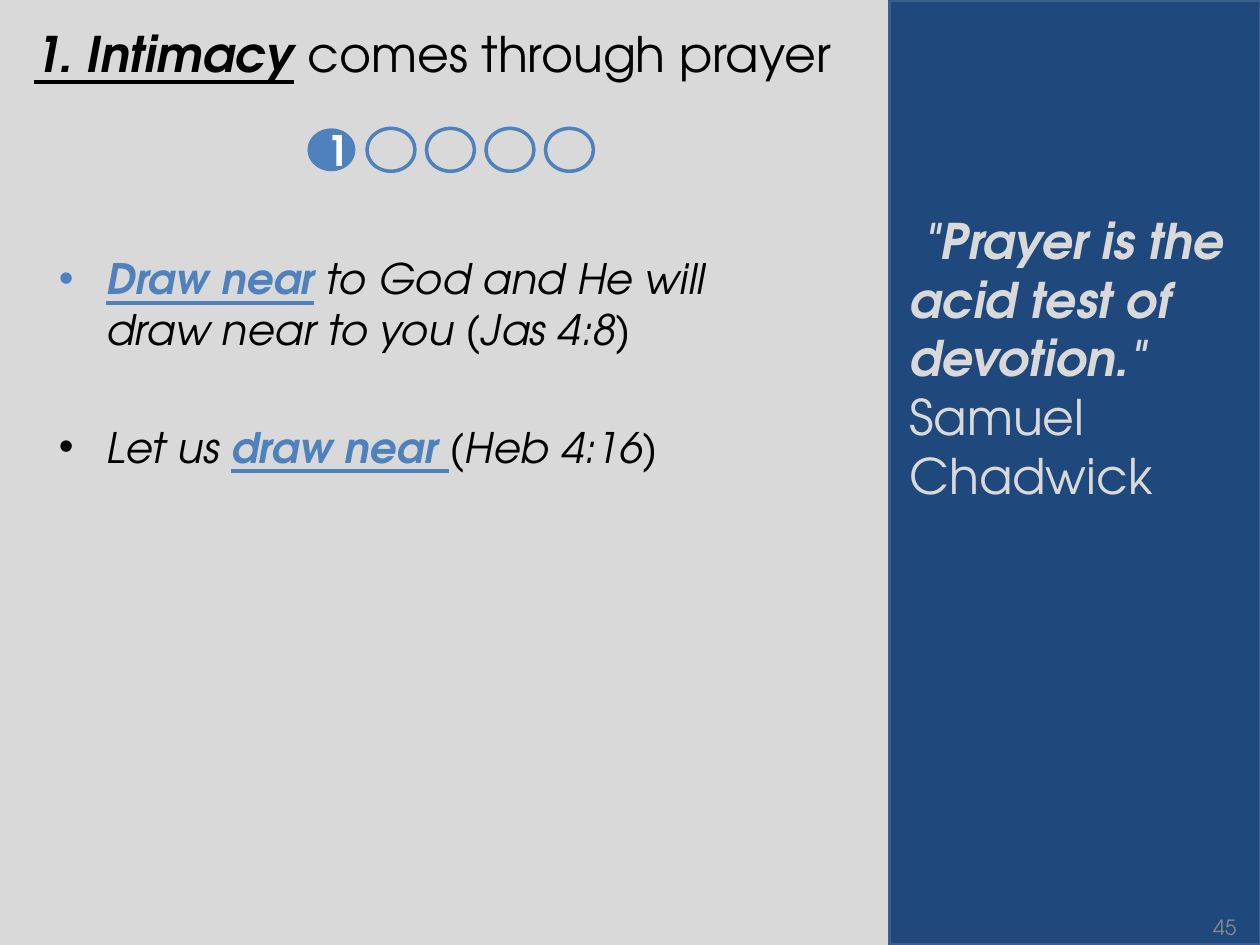
from lxml import etree
from pptx import Presentation
from pptx.dml.color import RGBColor
from pptx.enum.shapes import MSO_SHAPE
from pptx.enum.text import MSO_ANCHOR, PP_ALIGN
from pptx.oxml.ns import qn
from pptx.util import Pt

RECTANGLE, OVAL = MSO_SHAPE.RECTANGLE, MSO_SHAPE.OVAL
TOP, MIDDLE = MSO_ANCHOR.TOP, MSO_ANCHOR.MIDDLE
LEFT, CENTER, RIGHT = PP_ALIGN.LEFT, PP_ALIGN.CENTER, PP_ALIGN.RIGHT

FONT = "TeX Gyre Adventor"
BACKGROUND = RGBColor(0xD9, 0xD9, 0xD9)
NAVY = RGBColor(0x1F, 0x49, 0x7D)
NAVY_EDGE = RGBColor(0x3A, 0x5F, 0x8C)
BLUE = RGBColor(0x4F, 0x81, 0xBD)
GRAY = RGBColor(0x89, 0x89, 0x89)
BLACK = RGBColor(0, 0, 0)
WHITE = RGBColor(0xFF, 0xFF, 0xFF)

STEP_COUNT, CURRENT_STEP = 5, 1
STEP_LEFT, STEP_TOP, STEP_PITCH = 175.7, 73.4, 34
STEP_WIDTH, STEP_HEIGHT = 27.4, 24.5


def add_run(paragraph, text, size=24, color=BLACK, bold=False, italic=False, underline=False):
    """Append formatted text to a paragraph."""
    run = paragraph.add_run()
    run.text = text
    font = run.font
    font.name, font.size = FONT, Pt(size)
    font.bold, font.italic, font.underline = bold, italic, underline
    font.color.rgb = color


def add_text_box(slide, left, top, width, height, align=LEFT, anchor=TOP):
    """Add a wrapping text box and return its text frame."""
    shape = slide.shapes.add_textbox(Pt(left), Pt(top), Pt(width), Pt(height))
    frame = shape.text_frame
    frame.word_wrap = True
    frame.vertical_anchor = anchor
    frame.paragraphs[0].alignment = align
    return frame


def add_shape(slide, kind, left, top, width, height, fill=None, line=None):
    """Add a preset shape with an optional fill and outline."""
    shape = slide.shapes.add_shape(kind, Pt(left), Pt(top), Pt(width), Pt(height))
    shape.shadow.inherit = False
    if fill is None:
        shape.fill.background()
    else:
        shape.fill.solid()
        shape.fill.fore_color.rgb = fill
    if line is None:
        shape.line.fill.background()
    else:
        shape.line.color.rgb = line
        shape.line.width = Pt(2)
    return shape


def make_bullet(paragraph):
    """Give a paragraph a hanging round bullet."""
    properties = paragraph._p.get_or_add_pPr()
    properties.set("marL", str(Pt(27)))
    properties.set("indent", str(Pt(-27)))
    etree.SubElement(properties, qn("a:buFont"), typeface="Arial")
    etree.SubElement(properties, qn("a:buChar"), char="•")


def add_steps(slide):
    """Draw the row of step circles with the current one filled."""
    for step in range(1, STEP_COUNT + 1):
        current = step == CURRENT_STEP
        left = STEP_LEFT + (step - 1) * STEP_PITCH
        circle = add_shape(slide, OVAL, left, STEP_TOP, STEP_WIDTH, STEP_HEIGHT,
                           fill=BLUE if current else None, line=None if current else BLUE)
        if current:
            frame = circle.text_frame
            frame.vertical_anchor = MIDDLE
            frame.paragraphs[0].alignment = CENTER
            add_run(frame.paragraphs[0], str(step), color=WHITE, bold=True)


def add_verses(slide):
    """Write the bulleted verses."""
    frame = add_text_box(slide, 26.6, 141, 425.5, 296)
    first = frame.paragraphs[0]
    make_bullet(first)
    add_run(first, "Draw near", color=BLUE, bold=True, italic=True, underline=True)
    add_run(first, " to God and He will draw near to you (Jas 4:8)", italic=True)
    second = frame.add_paragraph()
    second.space_before = Pt(38.5)
    make_bullet(second)
    add_run(second, "Let us ", italic=True)
    add_run(second, "draw near ", color=BLUE, bold=True, italic=True, underline=True)
    add_run(second, "(Heb 4:16)", italic=True)


def add_quote(slide):
    """Write the quotation and its author on the side panel."""
    paragraph = add_text_box(slide, 512.6, 116.6, 205.2, 267.8).paragraphs[0]
    add_run(paragraph, ' "Prayer is the acid test of devotion."',
            size=28, color=BACKGROUND, bold=True, italic=True)
    paragraph.add_line_break()
    add_run(paragraph, "Samuel Chadwick", size=28, color=BACKGROUND)


def main():
    """Build and save the slide."""
    presentation = Presentation()
    presentation.slide_width, presentation.slide_height = Pt(720), Pt(540)
    slide = presentation.slides.add_slide(presentation.slide_layouts[6])
    slide.background.fill.solid()
    slide.background.fill.fore_color.rgb = BACKGROUND

    add_shape(slide, RECTANGLE, 508.3, 0, 212.4, 540, fill=NAVY, line=NAVY_EDGE)
    title = add_text_box(slide, 12.5, 10, 481.7, 39.6).paragraphs[0]
    add_run(title, "1. Intimacy", size=28, bold=True, italic=True, underline=True)
    add_run(title, " comes through prayer", size=28)
    add_verses(slide)
    number = add_text_box(slide, 545.8, 515.5, 167.8, 28.8, align=RIGHT, anchor=MIDDLE)
    add_run(number.paragraphs[0], "45", size=12, color=GRAY)
    add_steps(slide)
    add_quote(slide)
    presentation.save("out.pptx")


if __name__ == "__main__":
    main()
